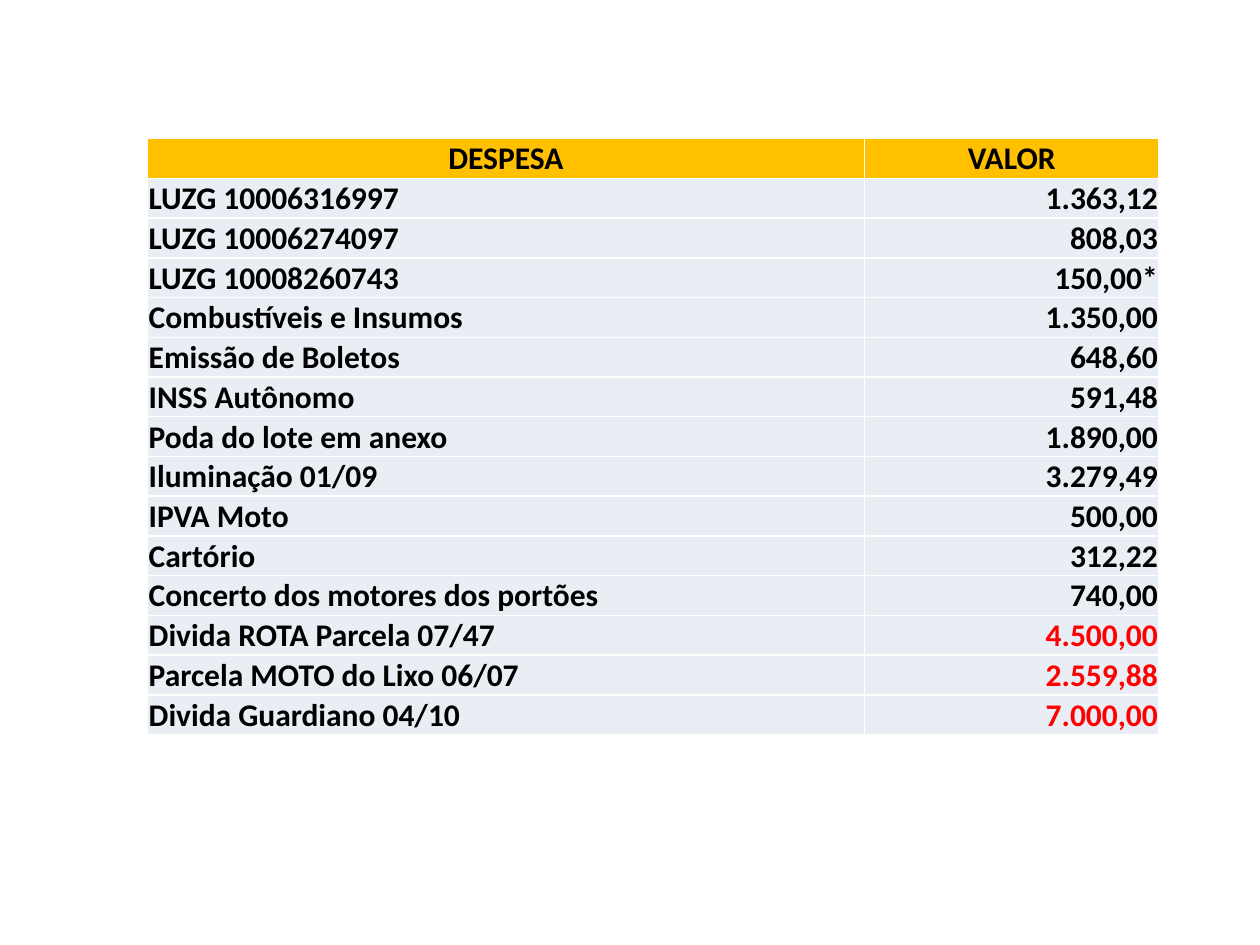
import pptx
import pptx.dml.color
import pptx.enum.text
import pptx.oxml
import pptx.oxml.ns
import pptx.util
from pptx.util import Inches

BLACK = pptx.dml.color.RGBColor(0x00, 0x00, 0x00)
RED = pptx.dml.color.RGBColor(0xFF, 0x00, 0x00)
WHITE = pptx.dml.color.RGBColor(0xFF, 0xFF, 0xFF)
AMBER = pptx.dml.color.RGBColor(0xFF, 0xC0, 0x00)
PALE_BLUE = pptx.dml.color.RGBColor(0xE9, 0xED, 0xF4)

ALIGN = pptx.enum.text.PP_ALIGN
ANCHOR = pptx.enum.text.MSO_ANCHOR

HEADER = ("DESPESA", "VALOR")
EXPENSES = [
    ("LUZG 10006316997", "1.363,12"),
    ("LUZG 10006274097", "808,03"),
    ("LUZG 10008260743", "150,00*"),
    ("Combustíveis e Insumos", "1.350,00"),
    ("Emissão de Boletos", "648,60"),
    ("INSS Autônomo", "591,48"),
    ("Poda do lote em anexo", "1.890,00"),
    ("Iluminação 01/09", "3.279,49"),
    ("IPVA Moto", "500,00"),
    ("Cartório", "312,22"),
    ("Concerto dos motores dos portões", "740,00"),
]
DEBTS = [
    ("Divida ROTA Parcela 07/47", "4.500,00"),
    ("Parcela MOTO do Lixo 06/07", "2.559,88"),
    ("Divida Guardiano 04/10", "7.000,00"),
]


class SlideBuilder:
    """Holds the style and the current slide."""

    font_name = "Calibri"
    font_size = pptx.util.Pt(18)
    border_width = pptx.util.Pt(1)
    inset = Inches(0.01)

    def __init__(self, slide):
        self.slide = slide

    def add_table(self, left, top, column_widths, row_height, row_count):
        shape = self.slide.shapes.add_table(
            row_count, len(column_widths), left, top,
            sum(column_widths), row_height * row_count)
        table = shape.table
        for column, width in zip(table.columns, column_widths):
            column.width = width
        for row in table.rows:
            row.height = row_height
        return table

    def fill_row(self, table, index, texts, fill, anchor, alignments, colors):
        for column, text in enumerate(texts):
            cell = table.cell(index, column)
            cell.margin_left = cell.margin_right = cell.margin_top = self.inset
            cell.margin_bottom = 0
            cell.vertical_anchor = anchor
            self.add_borders(cell)
            cell.fill.solid()
            cell.fill.fore_color.rgb = fill
            paragraph = cell.text_frame.paragraphs[0]
            paragraph.alignment = alignments[column]
            self.add_run(paragraph, text, colors[column])

    def add_run(self, paragraph, text, color):
        run = paragraph.add_run()
        run.text = text
        run.font.name = self.font_name
        run.font.size = self.font_size
        run.font.bold = True
        run.font.color.rgb = color

    def add_borders(self, cell):
        properties = cell._tc.get_or_add_tcPr()
        for side in ("lnL", "lnR", "lnT", "lnB"):
            properties.append(pptx.oxml.parse_xml(
                f'<a:{side} {pptx.oxml.ns.nsdecls("a")} w="{self.border_width}">'
                f'<a:solidFill><a:srgbClr val="{WHITE}"/></a:solidFill></a:{side}>'))


def main():
    presentation = pptx.Presentation()
    presentation.slide_width = Inches(10)
    presentation.slide_height = Inches(7.5)
    blank_layout = presentation.slide_layouts[6]
    builder = SlideBuilder(presentation.slides.add_slide(blank_layout))

    # Expense table
    rows = EXPENSES + DEBTS
    table = builder.add_table(Inches(1.17), Inches(1.1),
                              [Inches(5.69), Inches(2.34)], Inches(0.31),
                              len(rows) + 1)

    # Header row
    builder.fill_row(table, 0, HEADER, AMBER, ANCHOR.MIDDLE,
                     (ALIGN.CENTER, ALIGN.CENTER), (BLACK, BLACK))

    # Body rows, with the debts' values in red
    for index, row in enumerate(rows, start=1):
        value_color = RED if row in DEBTS else BLACK
        builder.fill_row(table, index, row, PALE_BLUE, ANCHOR.BOTTOM,
                         (ALIGN.LEFT, ALIGN.RIGHT), (BLACK, value_color))

    presentation.save("out.pptx")


if __name__ == "__main__":
    main()
